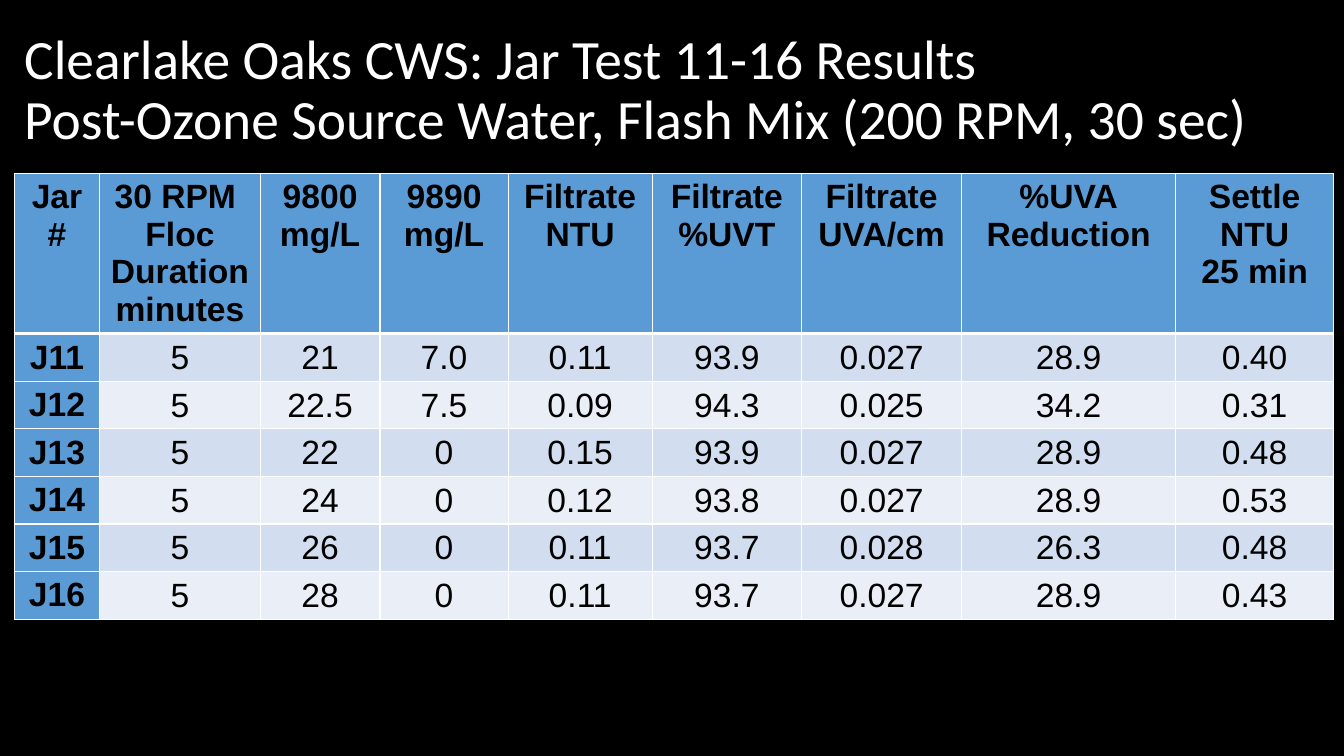
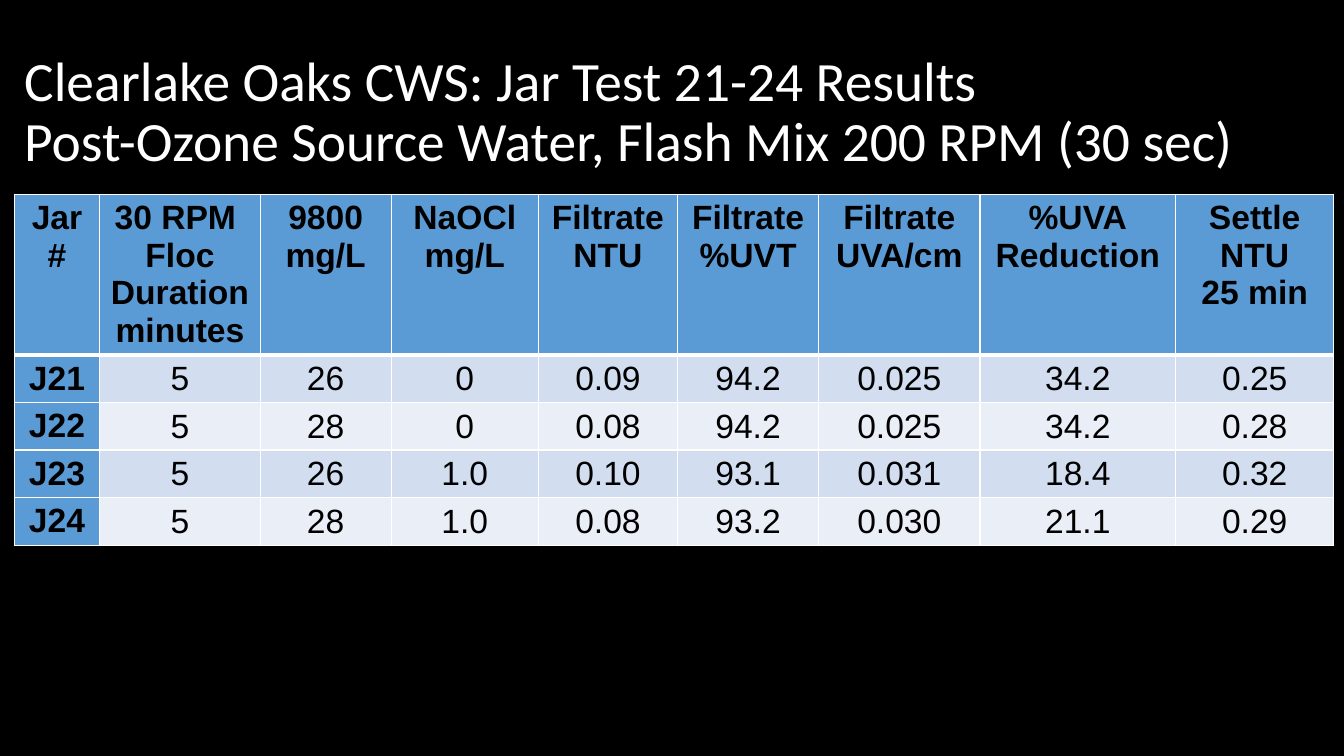
from lxml.etree import SubElement
from pptx import Presentation
from pptx.dml.color import RGBColor
from pptx.enum.text import MSO_ANCHOR as Anchor, MSO_AUTO_SIZE as AutoSize, PP_ALIGN as Align
from pptx.oxml.ns import qn
from pptx.util import Inches, Pt

# Shared style
BLACK, WHITE = "000000", "FFFFFF"
HEADING_BLUE = "5B9BD5"
BANDS = ("D2DEEF", "EAEFF7")
LEFT = 0.14
TITLE_HEIGHT = 1.45
HEADER_HEIGHT, ROW_HEIGHT = 1.59, 0.47
THIN, THICK = 1, 3
HEADING_INSETS = (0.1, 0.05, 0.1, 0.05)
VALUE_INSETS = (0.01, 0.01, 0.01, 0)

# Column headings that both tables use
FIRST_HEADINGS = ["Jar\n#", "30 RPM \nFloc\nDuration\nminutes", "9800\nmg/L"]
LAST_HEADINGS = ["Filtrate\nNTU", "Filtrate\n%UVT", "Filtrate\nUVA/cm",
                 "%UVA\nReduction", "Settle\nNTU\n25 min"]

# Jar test results
JARS_11_16 = [
    ["J11", "5", "21", "7.0", "0.11", "93.9", "0.027", "28.9", "0.40"],
    ["J12", "5", "22.5", "7.5", "0.09", "94.3", "0.025", "34.2", "0.31"],
    ["J13", "5", "22", "0", "0.15", "93.9", "0.027", "28.9", "0.48"],
    ["J14", "5", "24", "0", "0.12", "93.8", "0.027", "28.9", "0.53"],
    ["J15", "5", "26", "0", "0.11", "93.7", "0.028", "26.3", "0.48"],
    ["J16", "5", "28", "0", "0.11", "93.7", "0.027", "28.9", "0.43"],
]
JARS_21_24 = [
    ["J21", "5", "26", "0", "0.09", "94.2", "0.025", "34.2", "0.25"],
    ["J22", "5", "28", "0", "0.08", "94.2", "0.025", "34.2", "0.28"],
    ["J23", "5", "26", "1.0", "0.10", "93.1", "0.031", "18.4", "0.32"],
    ["J24", "5", "28", "1.0", "0.08", "93.2", "0.030", "21.1", "0.29"],
]


def color(value):
    return RGBColor.from_string(value)


def fill_solid(target, value):
    target.fill.solid()
    target.fill.fore_color.rgb = color(value)


def style_paragraph(para, font, size, value, align, bold=False):
    para.alignment = align
    para.font.name = font
    para.font.size = Pt(size)
    para.font.bold = bold
    para.font.color.rgb = color(value)


def add_title(page, lines, top, width):
    title = page.shapes.title
    title.left, title.top = Inches(LEFT), Inches(top)
    title.width, title.height = Inches(width), Inches(TITLE_HEIGHT)
    frame = title.text_frame
    frame.auto_size = AutoSize.NONE
    frame.vertical_anchor = Anchor.MIDDLE
    frame.text = "\v".join(lines)
    para = frame.paragraphs[0]
    para.line_spacing = 0.9
    style_paragraph(para, "Calibri", 39.6, WHITE, Align.LEFT)


def set_borders(cell, top, bottom):
    properties = cell._tc.get_or_add_tcPr()
    for side, width in (("L", THIN), ("R", THIN), ("T", top), ("B", bottom)):
        line = SubElement(properties, qn(f"a:ln{side}"), w=str(Pt(width)))
        SubElement(SubElement(line, qn("a:solidFill")), qn("a:srgbClr"), val=WHITE)


def format_cell(cell, text, row, column):
    heading = row == 0 or column == 0
    set_borders(cell, THICK if row == 1 else THIN, THICK if row == 0 else THIN)
    fill_solid(cell, HEADING_BLUE if heading else BANDS[(row - 1) % 2])
    insets = HEADING_INSETS if heading else VALUE_INSETS
    cell.margin_left, cell.margin_top, cell.margin_right, cell.margin_bottom = map(Inches, insets)
    cell.vertical_anchor = Anchor.TOP if heading else Anchor.MIDDLE
    cell.text_frame.text = text
    for para in cell.text_frame.paragraphs:
        style_paragraph(para, "Arial", 24, BLACK, Align.CENTER, heading)


def add_results_table(page, top, widths, second_dose, results):
    rows = [FIRST_HEADINGS + [second_dose] + LAST_HEADINGS] + results
    heights = [HEADER_HEIGHT] + [ROW_HEIGHT] * len(results)
    table = page.shapes.add_table(len(rows), len(widths), Inches(LEFT), Inches(top),
                                  Inches(sum(widths)), Inches(sum(heights))).table
    table.first_col = True
    table.horz_banding = False
    for column, width in zip(table.columns, widths):
        column.width = Inches(width)
    for row, height in zip(table.rows, heights):
        row.height = Inches(height)
    for row, texts in enumerate(rows):
        for column, text in enumerate(texts):
            format_cell(table.cell(row, column), text, row, column)


def main():
    deck = Presentation()
    deck.slide_width, deck.slide_height = Inches(13.33), Inches(7.5)
    fill_solid(deck.slide_master.background, BLACK)
    title_only = deck.slide_layouts.get_by_name("Title Only")

    # Jars 11 to 16
    page = deck.slides.add_slide(title_only)
    add_title(page, ["Clearlake Oaks CWS: Jar Test 11-16 Results",
                     "Post-Ozone Source Water, Flash Mix (200 RPM, 30 sec)"], 0.18, 12.92)
    add_results_table(page, 1.72, [0.85, 1.59, 1.19, 1.27, 1.43, 1.48, 1.59, 2.12, 1.57],
                      "9890\nmg/L", JARS_11_16)

    # Jars 21 to 24
    page = deck.slides.add_slide(title_only)
    add_title(page, ["Clearlake Oaks CWS: Jar Test 21-24 Results",
                     "Post-Ozone Source Water, Flash Mix 200 RPM (30 sec)"], 0.4, 12.59)
    add_results_table(page, 1.93, [0.85, 1.59, 1.3, 1.46, 1.38, 1.4, 1.6, 1.94, 1.57],
                      "NaOCl\nmg/L", JARS_21_24)

    deck.save("out.pptx")


if __name__ == "__main__":
    main()
